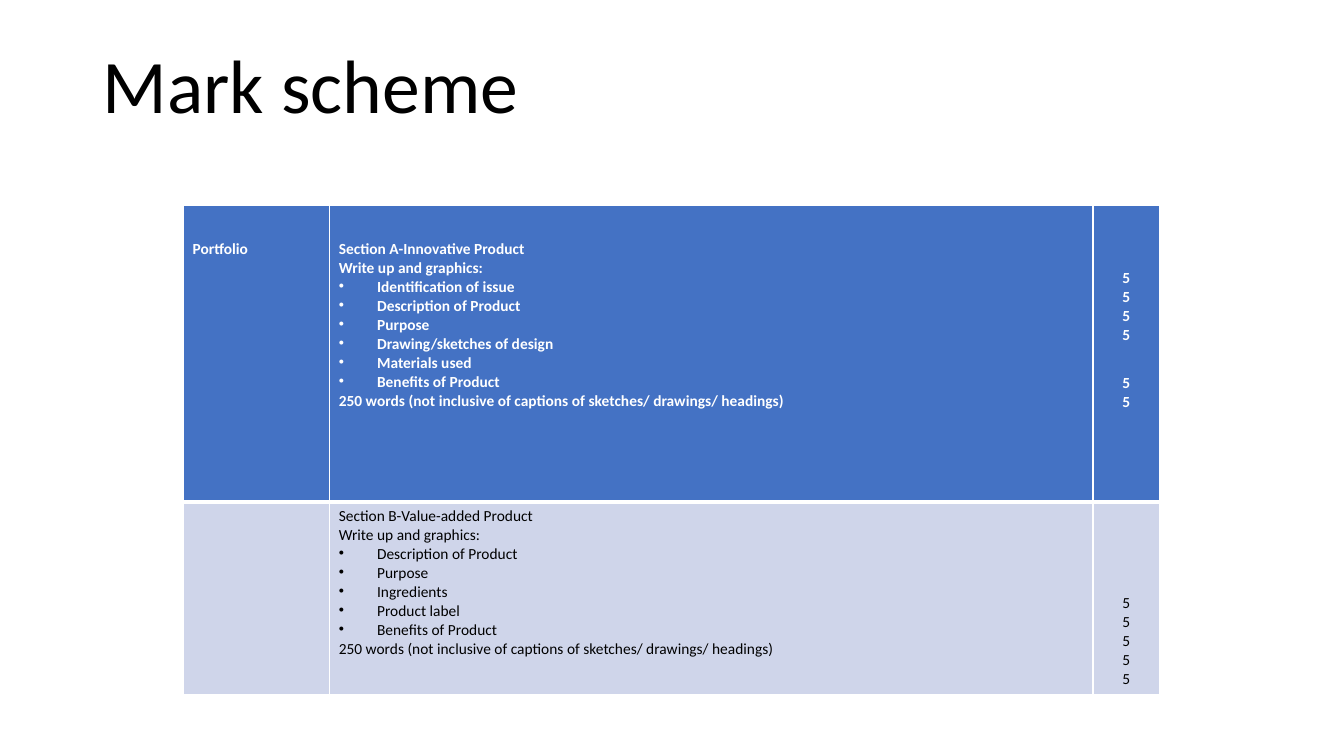
import pptx
import pptx.dml.color
import pptx.enum.text
import pptx.oxml
import pptx.oxml.ns
import pptx.util
from dataclasses import dataclass
from pptx.util import Inches


@dataclass(frozen=True)
class Theme:
    font: str = "Calibri"
    title_size: int = 54
    cell_size: int = 11
    black: str = "000000"
    white: str = "FFFFFF"
    header_fill: str = "4472C4"
    body_fill: str = "CFD5EA"


theme = Theme()
rgb = pptx.dml.color.RGBColor.from_string
align = pptx.enum.text.PP_ALIGN


def set_font(paragraph, size, color, bold):
    paragraph.font.name = theme.font
    paragraph.font.size = pptx.util.Pt(size)
    paragraph.font.color.rgb = rgb(color)
    paragraph.font.bold = bold


def add_border(cell, side, points):
    cell._tc.get_or_add_tcPr().append(pptx.oxml.parse_xml(
        f'<a:{side} {pptx.oxml.ns.nsdecls("a")} w="{pptx.util.Pt(points)}">'
        f'<a:solidFill><a:srgbClr val="{theme.white}"/></a:solidFill></a:{side}>'))


presentation = pptx.Presentation()
presentation.slide_width, presentation.slide_height = Inches(13.33), Inches(7.5)
slide = presentation.slides.add_slide(presentation.slide_layouts[5])

# Title
title = slide.shapes.title
title.left, title.top = Inches(0.92), Inches(0.32)
title.width, title.height = Inches(11.5), Inches(1.02)
title.text_frame.text = "Mark scheme"
title.text_frame.auto_size = pptx.enum.text.MSO_AUTO_SIZE.NONE
title.text_frame.vertical_anchor = pptx.enum.text.MSO_ANCHOR.BOTTOM
heading = title.text_frame.paragraphs[0]
heading.alignment = align.LEFT
heading.line_spacing = 0.9
set_font(heading, theme.title_size, theme.black, False)

# Table content: lines starting with a bullet become list items
word_limit = "250 words (not inclusive of captions of sketches/ drawings/ headings)"
section_a = ["Section A-Innovative Product", "Write up and graphics:",
             "•Identification of issue", "•Description of Product", "•Purpose",
             "•Drawing/sketches of design", "•Materials used",
             "•Benefits of Product", word_limit]
section_b = ["Section B-Value-added Product", "Write up and graphics:",
             "•Description of Product", "•Purpose", "•Ingredients",
             "•Product label", "•Benefits of Product", word_limit]
sections = [[["Portfolio"], section_a, ["5"] * 6],
            [[], section_b, ["5"] * 5]]
top_margins = [[0.34, 0.34, 0.63], [0.05, 0.05, 0.91]]
fills = [theme.header_fill, theme.body_fill]
text_colors = [theme.white, theme.black]
column_widths = [1.45, 7.57, 0.66]
row_heights = [2.94, 1.91]
marks_column = 2

# Table grid
scheme = slide.shapes.add_table(
    len(row_heights), len(column_widths), Inches(1.82), Inches(2.04),
    Inches(sum(column_widths)), Inches(sum(row_heights))).table
scheme.horz_banding = False
for column, width in zip(scheme.columns, column_widths):
    column.width = Inches(width)
for row, height in zip(scheme.rows, row_heights):
    row.height = Inches(height)

# Table cells
for r, section in enumerate(sections):
    for c, lines in enumerate(section):
        cell = scheme.cell(r, c)
        cell.margin_left = cell.margin_right = Inches(0.09)
        cell.margin_top = Inches(top_margins[r][c])
        cell.margin_bottom = Inches(0.05)
        for side in ("lnL", "lnR", "lnT", "lnB"):
            between_rows = side == ("lnB" if r == 0 else "lnT")
            add_border(cell, side, 3 if between_rows else 1)
        cell.fill.solid()
        cell.fill.fore_color.rgb = rgb(fills[r])

        cell.text_frame.text = "\n".join(line.lstrip("•") for line in lines)
        for line, paragraph in zip(lines, cell.text_frame.paragraphs):
            set_font(paragraph, theme.cell_size, text_colors[r], r == 0)
            paragraph.alignment = align.CENTER if c == marks_column else align.LEFT
            if line.startswith("•"):
                properties = paragraph._p.get_or_add_pPr()
                properties.set("marL", str(Inches(0.38)))
                properties.set("indent", str(-Inches(0.38)))
                properties.insert(0, pptx.oxml.parse_xml(
                    f'<a:buChar {pptx.oxml.ns.nsdecls("a")} char="•"/>'))

# Gap before the last two marks of section A
marks_a = scheme.cell(0, marks_column).text_frame.paragraphs
marks_a[4].space_before = pptx.util.Pt(20.7)

presentation.save("out.pptx")
